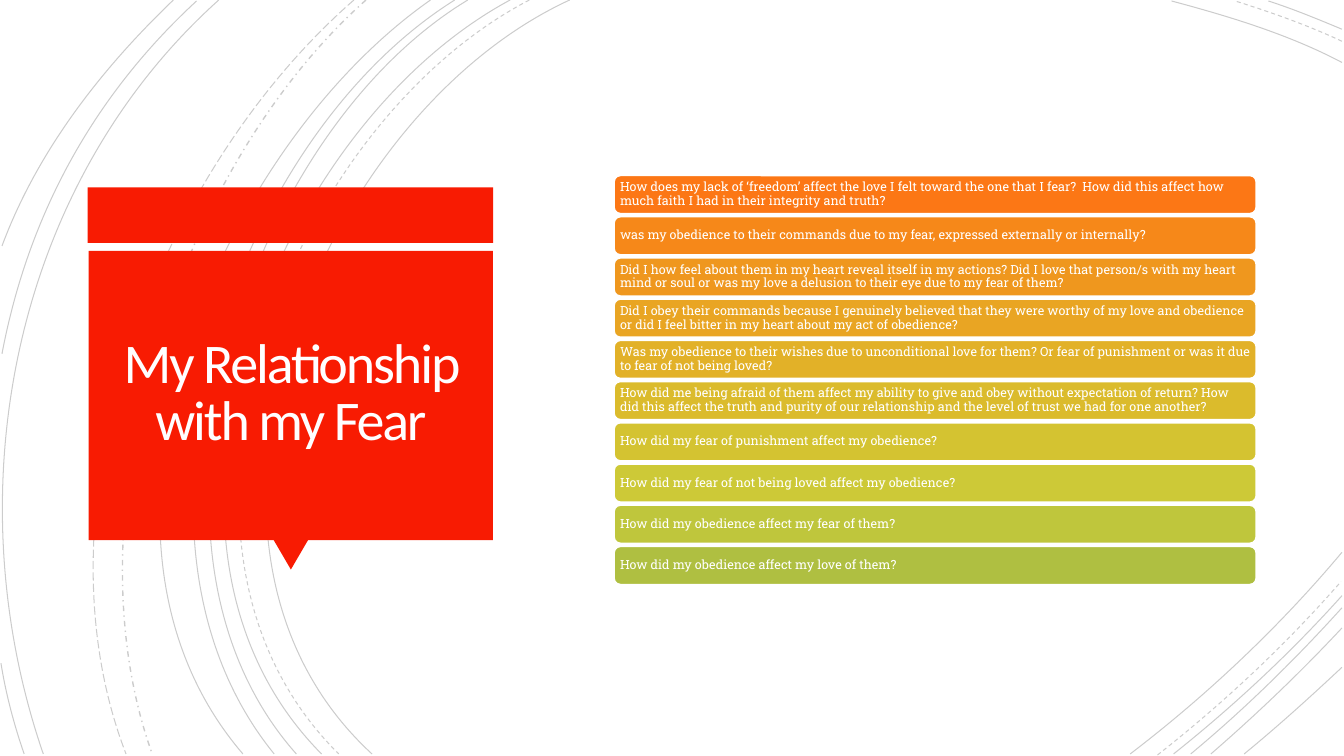
"""Build the slide "My Relationship with my Fear" with its list of questions."""
from lxml.etree import SubElement
from pptx import Presentation
from pptx.dml.color import RGBColor
from pptx.enum.dml import MSO_LINE_DASH_STYLE as Dash
from pptx.enum.shapes import MSO_SHAPE as Shape
from pptx.enum.text import MSO_ANCHOR as Anchor, MSO_AUTO_SIZE as AutoSize, PP_ALIGN as Align
from pptx.oxml.ns import qn
from pptx.util import Inches, Pt

BLACK = RGBColor(0x00, 0x00, 0x00)
WHITE = RGBColor(0xFF, 0xFF, 0xFF)
TITLE_WHITE = RGBColor(0xFF, 0xFE, 0xFF)
RED = RGBColor(0xF8, 0x1B, 0x02)

SOLID, DASH, LONG, DASH_DOT = Dash.SOLID, Dash.DASH, Dash.LONG_DASH, Dash.DASH_DOT
ARCS = [
    (SOLID, (5.65, 0), (3.15, 1.15), (1.43, 5.4), (3.69, 7.48)),
    (SOLID, (13.31, 0.62), (12.78, 0.34), (12.18, 0.16), (11.62, 0.01)),
    (SOLID, (11.21, 7.48), (11.97, 6.9), (12.69, 6.22), (13.31, 5.48)),
    (DASH, (5.25, 0), (2.85, 1.25), (1.23, 5.37), (3.36, 7.48)),
    (DASH, (13.31, 0.41), (12.97, 0.25), (12.6, 0.12), (12.25, 0.01)),
    (DASH, (11.48, 7.49), (12.13, 6.98), (12.75, 6.4), (13.3, 5.77)),
    (SOLID, (5.06, 0), (2.7, 1.27), (1.1, 5.37), (3.19, 7.48)),
    (SOLID, (13.31, 0.29), (13.07, 0.19), (12.83, 0.09), (12.58, 0.01)),
    (SOLID, (11.64, 7.48), (12.23, 7.01), (12.8, 6.48), (13.31, 5.91)),
    (SOLID, (4.64, 0), (2.44, 1.33), (1.1, 5.41), (2.94, 7.48)),
    (SOLID, (11.81, 7.48), (12.34, 7.04), (12.84, 6.55), (13.31, 6.03)),
    (SOLID, (4.51, 0), (2.31, 1.38), (0.97, 5.33), (2.72, 7.48)),
    (SOLID, (12.01, 7.48), (12.46, 7.09), (12.9, 6.67), (13.31, 6.23)),
    (SOLID, (4.27, 0), (2.17, 1.47), (0.53, 5.29), (2.41, 7.48)),
    (SOLID, (12.34, 7.48), (12.67, 7.21), (12.99, 6.92), (13.31, 6.62)),
    (DASH_DOT, (3.63, 0), (1.76, 1.66), (0.65, 5.09), (1.51, 7.48)),
    (LONG, (3.51, 0), (1.57, 1.69), (0.29, 4.99), (1.25, 7.48)),
    (SOLID, (2.17, 0), (0.11, 1.85), (-0.46, 4.9), (0.43, 7.48)),
    (SOLID, (1.95, 0.01), (0.92, 0.96), (0.28, 2.14), (0.02, 3.51)),
    (SOLID, (0.01, 6.58), (0.06, 6.89), (0.14, 7.19), (0.24, 7.48)),
    (SOLID, (1.72, 0), (1, 0.69), (0.37, 1.5), (0.02, 2.44)),
]

RED_PARTS = [
    (Shape.RECTANGLE, 0.87, 1.86, 4.02, 0.55, 0),
    (Shape.ISOSCELES_TRIANGLE, 2.71, 5.35, 0.35, 0.3, 180),
    (Shape.RECTANGLE, 0.88, 2.49, 4.01, 2.87, 0),
]

QUESTIONS = [
    ("FC7715", "How does my lack of ‘freedom’ affect the love I felt toward the one that I fear?  "
     "How did this affect how much faith I had in their integrity and truth?"),
    ("F68819", "was my obedience to their commands due to my fear, expressed externally or internally?"),
    ("EF971E", "Did I how feel about them in my heart reveal itself in my actions? Did I love that "
     "person/s with my heart mind or soul or was my love a delusion to their eye due to my fear of them?"),
    ("E9A523", "Did I obey their commands because I genuinely believed that they were worthy of my love "
     "and obedience or did I feel bitter in my heart about my act of obedience?"),
    ("E2B128", "Was my obedience to their wishes due to unconditional love for them? Or fear of "
     "punishment or was it due to fear of not being loved?"),
    ("DBBB2C", "How did me being afraid of them affect my ability to give and obey without expectation "
     "of return? How did this affect the truth and purity of our relationship and the level of trust "
     "we had for one another?"),
    ("D4C331", "How did my fear of punishment affect my obedience?"),
    ("CDC937", "How did my fear of not being loved affect my obedience?"),
    ("BFC63C", "How did my obedience affect my fear of them?"),
    ("AFBF41", "How did my obedience affect my love of them?"),
]
FIRST_TOP, LAST_TOP = 1.74, 5.42
PITCH = (LAST_TOP - FIRST_TOP) / (len(QUESTIONS) - 1)


def paint(shape, color):
    shape.shadow.inherit = False
    shape.fill.solid()
    shape.fill.fore_color.rgb = color


def write_text(shape, text, margin, align, line_spacing, font_name, size, color):
    frame = shape.text_frame
    frame.text = text
    frame.word_wrap = True
    frame.auto_size = AutoSize.NONE
    frame.vertical_anchor = Anchor.MIDDLE
    frame.margin_left = frame.margin_right = Inches(margin)
    frame.margin_top = frame.margin_bottom = Inches(margin)
    para = frame.paragraphs[0]
    para.alignment = align
    para.line_spacing = line_spacing
    span = para.runs[0]
    span.font.name = font_name
    span.font.size = Pt(size)
    span.font.color.rgb = color
    return span


deck = Presentation()
deck.slide_width, deck.slide_height = Inches(13.33), Inches(7.5)
page = deck.slides.add_slide(deck.slide_layouts[5])

for dash, *controls in ARCS:
    points = [(Inches(x), Inches(y)) for x, y in controls]
    builder = page.shapes.build_freeform(*points[0], scale=1.0)
    builder.add_line_segments(points[1:], close=False)
    arc = builder.convert_to_shape()
    outline = arc._element.find(".//" + qn("a:pathLst"))[0]
    curve = SubElement(outline, qn("a:cubicBezTo"))
    for segment in outline.findall(qn("a:lnTo")):
        curve.append(segment[0])
        outline.remove(segment)
    arc.shadow.inherit = False
    arc.fill.background()
    arc.line.color.rgb = BLACK
    arc.line.width = Pt(1 if dash == DASH_DOT else 0.75)
    arc.line.dash_style = dash
    line_color = arc.line._get_or_add_ln().find(".//" + qn("a:srgbClr"))
    SubElement(line_color, qn("a:alpha"), val="20000")

for kind, left, top, width, height, rotation in RED_PARTS:
    part = page.shapes.add_shape(kind, Inches(left), Inches(top), Inches(width), Inches(height))
    paint(part, RED)
    part.rotation = rotation
    part.line.fill.background()

title = page.shapes.title
title.left, title.top = Inches(0.97), Inches(2.57)
title.width, title.height = Inches(3.83), Inches(2.69)
title_span = write_text(title, "My Relationship with my Fear", 0.25, Align.CENTER, 0.85,
                        "Calibri", 40, TITLE_WHITE)
title_span.font._element.set("spc", "-150")
page.shapes._spTree.append(title._element)

for row, (fill, question) in enumerate(QUESTIONS):
    top = FIRST_TOP + row * PITCH
    bar = page.shapes.add_shape(Shape.ROUNDED_RECTANGLE, Inches(6.09), Inches(top),
                                Inches(6.37), Inches(0.38))
    paint(bar, RGBColor.from_string(fill))
    bar.line.color.rgb = WHITE
    bar.line.width = Pt(1.25)
    label = page.shapes.add_textbox(Inches(6.11), Inches(top + 0.02), Inches(6.33), Inches(0.34))
    write_text(label, question, 0.04, Align.LEFT, 0.9, "Roboto Slab", 9, WHITE)

deck.save("out.pptx")
